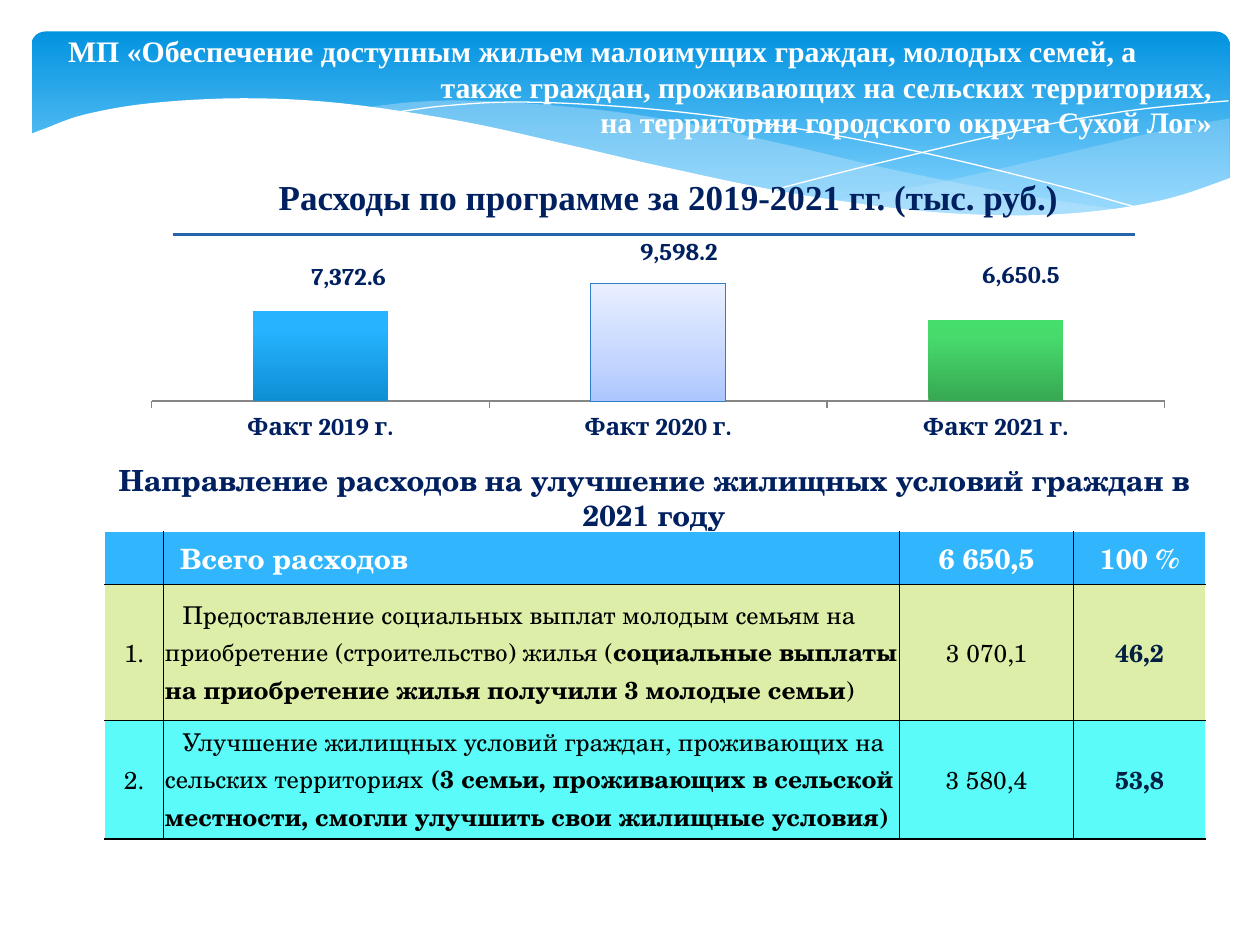
import pptx
import pptx.chart.data
import pptx.dml.color
import pptx.enum.chart
import pptx.enum.shapes
import pptx.enum.text
import pptx.oxml
import pptx.oxml.ns
import pptx.util
from pptx.util import Inches

ALIGN = pptx.enum.text.PP_ALIGN
ANCHOR = pptx.enum.text.MSO_ANCHOR
qn = pptx.oxml.ns.qn


def color(value):
    return pptx.dml.color.RGBColor.from_string(value)


def add_xml(parent, xml, index=None):
    namespaces = pptx.oxml.ns.nsdecls("a", "c")
    tag, rest = xml[1:].split(" ", 1)
    node = pptx.oxml.parse_xml(f"<{tag} {namespaces} {rest}")
    parent.insert(len(parent) if index is None else index, node)


def gradient(fill, owner, stops, angle):
    fill.gradient()
    fill.gradient_angle = angle
    stop_list = owner.find(".//" + qn("a:gsLst"))
    for old in list(stop_list):
        stop_list.remove(old)
    for percent, value in stops:
        add_xml(stop_list, f'<a:gs pos="{percent * 1000}"><a:srgbClr val="{value}"/></a:gs>')


def smooth(points, steps=6):
    """Catmull-Rom curve through the given points."""
    padded = [points[0], *points, points[-1]]
    curve = [points[0]]
    for a, b, c, d in zip(padded, padded[1:], padded[2:], padded[3:]):
        for step in range(1, steps + 1):
            t = step / steps
            curve.append(tuple(
                0.5 * (2 * q + (r - p) * t + (2 * p - 5 * q + 4 * r - s) * t ** 2
                       + (3 * q - p - 3 * r + s) * t ** 3)
                for p, q, r, s in zip(a, b, c, d)))
    return curve


class ProgramSlide:
    navy, white, black = "002060", "FFFFFF", "000000"
    serif, school, chart_font = "Times New Roman", "TeX Gyre Schola", "Cambria"

    def __init__(self, presentation):
        self.slide = presentation.slides.add_slide(presentation.slide_layouts[5])
        self.shapes = self.slide.shapes

    def style(self, font, size, value, name, bold=True):
        font.size, font.name, font.bold = pptx.util.Pt(size), name, bold
        font.color.rgb = color(value)

    def banner(self, left, top, width, height, stops):
        banner = self.shapes.add_shape(pptx.enum.shapes.MSO_SHAPE.ROUNDED_RECTANGLE,
                                       *map(Inches, (left, top, width, height)))
        banner.adjustments[0] = 0.07
        banner.shadow.inherit = False
        banner.line.fill.background()
        gradient(banner.fill, banner.element.spPr, stops, 270)

    def wave(self, points, fill=None, opacity=100):
        outline = [(Inches(x), Inches(y)) for x, y in points]
        builder = self.shapes.build_freeform(*outline[0])
        builder.add_line_segments(outline[1:], close=fill is not None)
        wave = builder.convert_to_shape()
        wave.shadow.inherit = False
        if fill:
            wave.fill.solid()
            wave.fill.fore_color.rgb = color(fill)
            add_xml(wave.element.spPr.find(".//" + qn("a:srgbClr")),
                    f'<a:alpha val="{opacity * 1000}"/>')
            wave.line.fill.background()
        else:
            wave.fill.background()
            wave.line.color.rgb = color(self.white)
            wave.line.width = 0

    def title(self, box, lines, size):
        title = self.shapes.title
        title.left, title.top, title.width, title.height = map(Inches, box)
        frame = title.text_frame
        frame.text = "\n".join(text for text, _ in lines)
        frame.vertical_anchor, frame.word_wrap = ANCHOR.TOP, True
        frame.auto_size = pptx.enum.text.MSO_AUTO_SIZE.NONE
        for paragraph, (_, alignment) in zip(frame.paragraphs, lines):
            paragraph.alignment = alignment
            self.style(paragraph.runs[0].font, size, self.white, self.serif)
        self.shapes.element.append(title.element)  # in front of the banner

    def heading(self, box, text, size, name):
        frame = self.shapes.add_textbox(*map(Inches, box)).text_frame
        frame.word_wrap = True
        frame.text = text
        frame.paragraphs[0].alignment = ALIGN.CENTER
        self.style(frame.paragraphs[0].runs[0].font, size, self.navy, name)

    def rule(self, left, right, y):
        rule = self.shapes.add_connector(pptx.enum.shapes.MSO_CONNECTOR.STRAIGHT,
                                         Inches(left), Inches(y), Inches(right), Inches(y))
        rule.line.color.rgb = color("2862AA")
        rule.line.width = pptx.util.Pt(1.5)
        add_xml(rule.element.spPr, "<a:effectLst />")

    def column_chart(self, box, bars):
        data = pptx.chart.data.CategoryChartData(number_format="#,##0.0")
        data.categories = [bar[0] for bar in bars]
        data.add_series("Расходы", [bar[1] for bar in bars])
        chart = self.shapes.add_chart(pptx.enum.chart.XL_CHART_TYPE.COLUMN_STACKED,
                                      *map(Inches, box), data).chart
        chart.has_legend = chart.has_title = False
        self.style(chart.font, 14, self.navy, self.chart_font)
        years, values = chart.category_axis, chart.value_axis
        values.visible = values.has_major_gridlines = False
        values.minimum_scale, values.maximum_scale = 0, 12000
        self.style(years.tick_labels.font, 14, self.navy, self.chart_font)
        years.format.line.color.rgb = color("868686")

        plot = chart.plots[0]
        plot.vary_by_categories = False
        plot.gap_width, plot.overlap = 150, 100
        series = plot.series[0]
        for index, (_, _, stops, outline, offset) in enumerate(bars):
            point = series.points[index]
            gradient(point.format.fill, point.format.element, stops, 90)
            if outline:
                point.format.line.color.rgb = color(outline)
            else:
                point.format.line.fill.background()
            self.style(point.data_label.font, 14, self.navy, self.chart_font)
            label = list(plot._element.iter(qn("c:dLbl")))[index]
            self.manual_layout(label, 1, x=offset[0], y=offset[1])
        self.hide_leader_lines(plot._element.find(".//" + qn("c:dLbls")))
        area = chart._chartSpace.find(".//" + qn("c:plotArea"))
        for old in area.findall(qn("c:layout")):
            area.remove(old)
        self.manual_layout(area, 0, layoutTarget="inner", xMode="edge", yMode="edge",
                           x=0.022, y=0.045, w=0.963, h=0.605)

    def hide_leader_lines(self, labels):
        for flag in labels.findall(qn("c:showLeaderLines")):
            flag.set("val", "0")
        add_xml(labels, '<c:extLst ><c:ext uri="{CE6537A1-D6FC-4f65-9D91-7224C49458BB}" '
                'xmlns:c15="http://schemas.microsoft.com/office/drawing/2012/chart">'
                '<c15:showLeaderLines val="0"/></c:ext></c:extLst>')

    def manual_layout(self, parent, index, **settings):
        items = "".join(f'<c:{key} val="{value}"/>' for key, value in settings.items())
        add_xml(parent, f"<c:layout ><c:manualLayout>{items}</c:manualLayout></c:layout>", index)

    def table(self, box, widths, heights, fills, rows):
        frame = self.shapes.add_table(len(rows), len(widths), *map(Inches, box))
        table = frame.table
        for column, width in zip(table.columns, widths):
            column.width = Inches(width)
        for r, (row, height, fill) in enumerate(zip(rows, heights, fills)):
            table.rows[r].height = Inches(height)
            for c, parts in enumerate(row):
                self.cell(table.cell(r, c), r, c, parts, len(widths) - 1)
                table.cell(r, c).fill.solid()
                table.cell(r, c).fill.fore_color.rgb = color(fill)

    def cell(self, cell, r, c, parts, last):
        tight = r > 0 and c == 1
        cell.vertical_anchor = ANCHOR.MIDDLE
        cell.margin_left = cell.margin_right = Inches(0.01 if tight else 0.13)
        cell.margin_top = cell.margin_bottom = Inches(0.01 if tight else 0.04)
        paragraph = cell.text_frame.paragraphs[0]
        paragraph.alignment = ALIGN.LEFT if c == 1 else ALIGN.CENTER
        if tight:
            paragraph._p.get_or_add_pPr().set("indent", str(Inches(0.14)))
        for text, bold in parts:
            run = paragraph.add_run()
            run.text = text
            value = self.white if r == 0 else "041F44" if c == last else self.black
            self.style(run.font, 14 if r else 16, value, self.school, bold)
        outer = {"L": c == 0, "R": c == last, "T": r == 0, "B": False}
        for side, is_outer in outer.items():
            value = self.white if is_outer else self.black
            add_xml(cell._tc.get_or_add_tcPr(), f'<a:ln{side} w="12700"><a:solidFill>'
                    f'<a:srgbClr val="{value}"/></a:solidFill></a:ln{side}>')


def main():
    presentation = pptx.Presentation()
    presentation.slide_width, presentation.slide_height = Inches(10), Inches(7.5)
    page = ProgramSlide(presentation)

    # Banner with waves
    page.banner(0.25, 0.25, 9.51, 1.56, [(0, "0293E0"), (90, "83D3FE")])
    page.wave(smooth([(9.76, 0.94), (9.21, 1.04), (8.61, 1.18), (7.53, 1.43), (6.61, 1.6)])
              + smooth([(6.61, 1.6), (7.19, 1.67), (7.81, 1.72), (8.35, 1.72), (8.89, 1.66),
                        (9.35, 1.56), (9.76, 1.41)]), "C6E7FC", 29)
    page.wave(smooth([(8.93, 1.67), (8.07, 1.54), (7.06, 1.34), (6.29, 1.16), (5.41, 0.97),
                      (4.65, 0.86), (3.8, 0.8), (3.28, 0.81), (2.86, 0.86)])
              + smooth([(2.86, 0.86), (3.62, 0.97), (4.49, 1.16), (5.66, 1.43), (6.5, 1.58),
                        (7.22, 1.68), (8.07, 1.73), (8.57, 1.71), (8.93, 1.67)]), "C6E7FC", 40)
    page.wave(smooth([(3.09, 0.9), (3.53, 0.84), (4.16, 0.81), (5.1, 0.86), (6.08, 0.98),
                      (7.27, 1.2), (8.31, 1.45), (9.07, 1.66)]))
    page.wave(smooth([(6.13, 1.51), (6.95, 1.3), (8.06, 1.04), (8.95, 0.88), (9.75, 0.8)]))
    page.wave(smooth([(9.77, 1.41), (9.3, 1.57), (8.75, 1.67), (8.09, 1.71), (7.26, 1.67),
                      (6.26, 1.53), (5.29, 1.33), (4.47, 1.14), (3.65, 0.96), (2.71, 0.82),
                      (1.93, 0.78), (1.19, 0.82), (0.67, 0.91), (0.36, 1.02), (0.23, 1.07)])
              + [(0.23, 2.24), (9.77, 2.24)], page.white)

    # Title and headings
    page.title((0.44, 0.21, 9.28, 0.96), [
        ("МП «Обеспечение доступным жильем малоимущих граждан, молодых семей, а", ALIGN.LEFT),
        ("также граждан, проживающих на сельских территориях,", ALIGN.RIGHT),
        ("на территории городского округа Сухой Лог»", ALIGN.RIGHT)], 17)
    page.rule(1.37, 9.01, 1.86)
    page.heading((1.13, 1.34, 8.35, 0.44),
                 "Расходы по программе за 2019-2021 гг. (тыс. руб.)", 20, page.serif)

    # Spending by year: label, value, gradient, outline, label offset
    page.column_chart((1.02, 1.89, 8.35, 1.97), [
        ("Факт 2019 г.", 7372.6, [(0, "0E8FD4"), (80, "26B3FF"), (100, "27B4FF")],
         None, (0.027, -0.32)),
        ("Факт 2020 г.", 9598.2, [(0, "ACC6FF"), (35, "C4D6FF"), (100, "E9EFFF")],
         "2F7FC8", (0.02, -0.37)),
        ("Факт 2021 г.", 6650.5, [(0, "37A853"), (80, "47DB6C"), (100, "45DE6B")],
         None, (0.024, -0.35))])

    # Directions of spending
    page.heading((0.7, 3.62, 8.98, 0.39),
                 "Направление расходов на улучшение жилищных условий граждан в 2021 году",
                 16.6, page.school)
    page.table((0.83, 4.22, 8.74, 2.44), [0.47, 5.84, 1.38, 1.05], [0.42, 1.08, 0.94],
               ["31B6FD", "DCEEA7", "5AFBF8"], [
        [[], [("Всего расходов", True)], [("6 650,5", True)], [("100 %", True)]],
        [[("1.", False)],
         [("Предоставление социальных выплат молодым семьям на приобретение "
           "(строительство) жилья (", False),
          ("социальные выплаты на приобретение жилья получили 3 молодые семьи", True),
          (")", False)], [("3 070,1", False)], [("46,2", True)]],
        [[("2.", False)],
         [("Улучшение жилищных условий граждан, проживающих на сельских территориях ", False),
          ("(3 семьи, проживающих в сельской местности, смогли улучшить свои "
           "жилищные условия)", True)], [("3 580,4", False)], [("53,8", True)]]])

    presentation.save("out.pptx")


if __name__ == "__main__":
    main()
